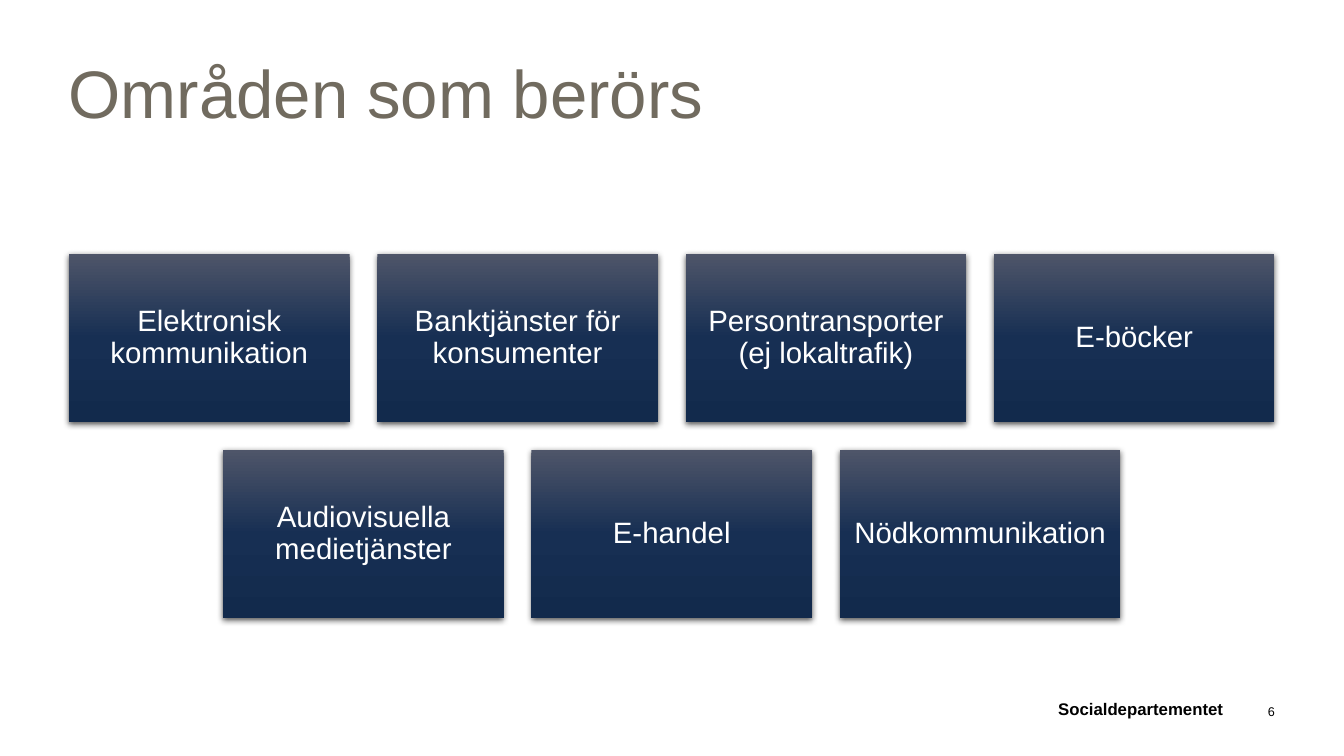
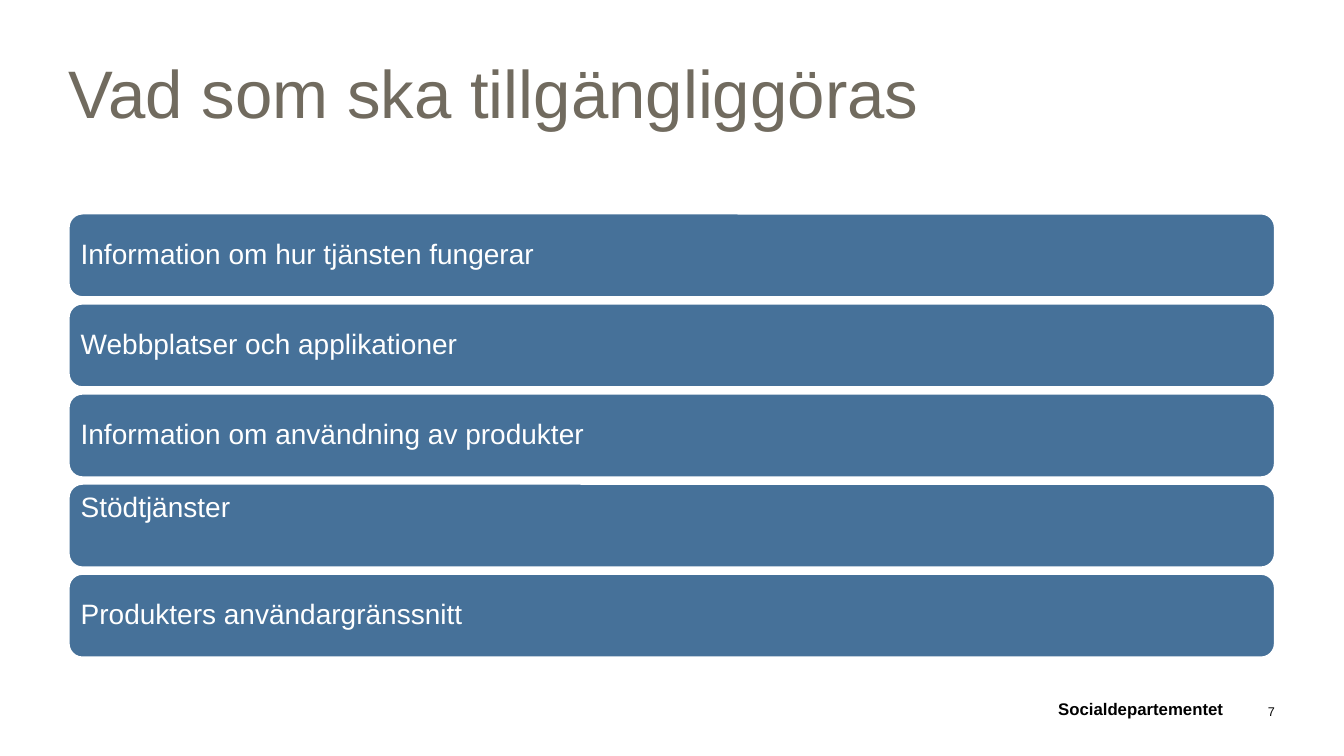
from copy import deepcopy

from lxml import etree
from pptx import Presentation
from pptx.dml.color import RGBColor
from pptx.enum.shapes import MSO_SHAPE as Shape
from pptx.enum.text import MSO_ANCHOR as Anchor, PP_ALIGN as Align
from pptx.oxml.ns import qn
from pptx.util import Cm, Pt

FONT = "Arial"
TAUPE = RGBColor(0x71, 0x6B, 0x5F)
BLACK = RGBColor(0x00, 0x00, 0x00)
WHITE = RGBColor(0xFF, 0xFF, 0xFF)
BLUE = RGBColor(0x46, 0x71, 0x99)
SLATE = RGBColor(0x4E, 0x55, 0x69)
NAVY = RGBColor(0x17, 0x2F, 0x53)
DARK = RGBColor(0x12, 0x2A, 0x4C)

LEFT, WIDTH = 1.73, 30.4


def write(shape, text, size, color, bold=False, align=Align.LEFT,
          anchor=Anchor.MIDDLE, pad=(0, 0), space=1.0):
    """Fill a shape with one paragraph; pad is (sides, top and bottom) in cm."""
    frame = shape.text_frame
    frame.word_wrap = True
    frame.vertical_anchor = anchor
    frame.margin_left = frame.margin_right = Cm(pad[0])
    frame.margin_top = frame.margin_bottom = Cm(pad[1])
    frame.text = text
    para = frame.paragraphs[0]
    para.alignment = align
    para.line_spacing = space
    font = para.runs[0].font
    font.name, font.size, font.bold = FONT, Pt(size), bold
    font.color.rgb = color


def shade(card):
    """Give a card its three-stop gradient and soft drop shadow."""
    card.fill.gradient()
    card.fill.gradient_angle = 270
    first = card.element.spPr.find(".//" + qn("a:gs"))
    first.addnext(deepcopy(first))
    stops = zip(card.fill.gradient_stops, (0, 0.5, 1), (SLATE, NAVY, DARK))
    for stop, place, color in stops:
        stop.position = place
        stop.color.rgb = color
    card.shadow.inherit = False
    effects = card.element.spPr.find(qn("a:effectLst"))
    drop = etree.SubElement(effects, qn("a:outerShdw"), blurRad=str(Pt(4.5)),
                            dist=str(Pt(1.5)), dir="5400000", rotWithShape="0")
    tint = etree.SubElement(drop, qn("a:srgbClr"), val=str(BLACK))
    etree.SubElement(tint, qn("a:alpha"), val="63000")


deck = Presentation()
deck.slide_width, deck.slide_height = Cm(33.87), Cm(19.05)

# Shared title place, title style and footer
layout = deck.slide_layouts[5]
head = layout.placeholders[0]
head.left, head.top = Cm(LEFT), Cm(1.17)
head.width, head.height = Cm(WIDTH), Cm(2.87)

slides = []
for page, title in ((6, "Områden som berörs"),
                    (7, "Vad som ska tillgängliggöras")):
    slide = deck.slides.add_slide(layout)
    slides.append(slide)
    write(slide.shapes.title, title, 48, TAUPE, anchor=Anchor.TOP, pad=(0, 0.13))
    for text, left, width, size, bold in (
            ("Socialdepartementet", 21.23, 9.6, 12, True),
            (str(page), 30.78, 1.35, 9, False)):
        box = slide.shapes.add_textbox(Cm(left), Cm(17.5), Cm(width), Cm(0.61))
        write(box, text, size, BLACK, bold=bold, align=Align.RIGHT,
              anchor=Anchor.BOTTOM)

areas, items = slides

# Cards in centred rows
CARD_W, CARD_H, GAP = 7.07, 4.24, 0.7
rows = (
    ("Elektronisk kommunikation", "Banktjänster för konsumenter",
     "Persontransporter (ej lokaltrafik)", "E-böcker"),
    ("Audiovisuella medietjänster", "E-handel", "Nödkommunikation"),
)
for row, names in enumerate(rows):
    span = len(names) * (CARD_W + GAP) - GAP
    start = LEFT + (WIDTH - span) / 2
    top = 6.4 + row * (CARD_H + GAP)
    for col, name in enumerate(names):
        left = start + col * (CARD_W + GAP)
        card = areas.shapes.add_shape(Shape.RECTANGLE, Cm(left), Cm(top),
                                      Cm(CARD_W), Cm(CARD_H))
        shade(card)
        card.line.fill.background()
        write(card, name, 21, WHITE, align=Align.CENTER, pad=(0.23, 0.23),
              space=0.9)

# Stacked bars
bars = (
    ("Information om hur tjänsten fungerar", Anchor.MIDDLE),
    ("Webbplatser och applikationer", Anchor.MIDDLE),
    ("Information om användning av produkter", Anchor.MIDDLE),
    ("Stödtjänster", Anchor.TOP),
    ("Produkters användargränssnitt", Anchor.MIDDLE),
)
for row, (name, anchor) in enumerate(bars):
    bar = items.shapes.add_shape(Shape.ROUNDED_RECTANGLE, Cm(LEFT),
                                 Cm(5.38 + row * 2.27), Cm(WIDTH), Cm(2.11))
    bar.shadow.inherit = False
    bar.fill.solid()
    bar.fill.fore_color.rgb = BLUE
    bar.line.color.rgb = WHITE
    bar.line.width = Pt(1.5)
    # Rounded corners inset the text by a further 0.29 of their radius
    write(bar, name, 20, WHITE, anchor=anchor, pad=(0.2, 0.15), space=0.9)

deck.save("out.pptx")
